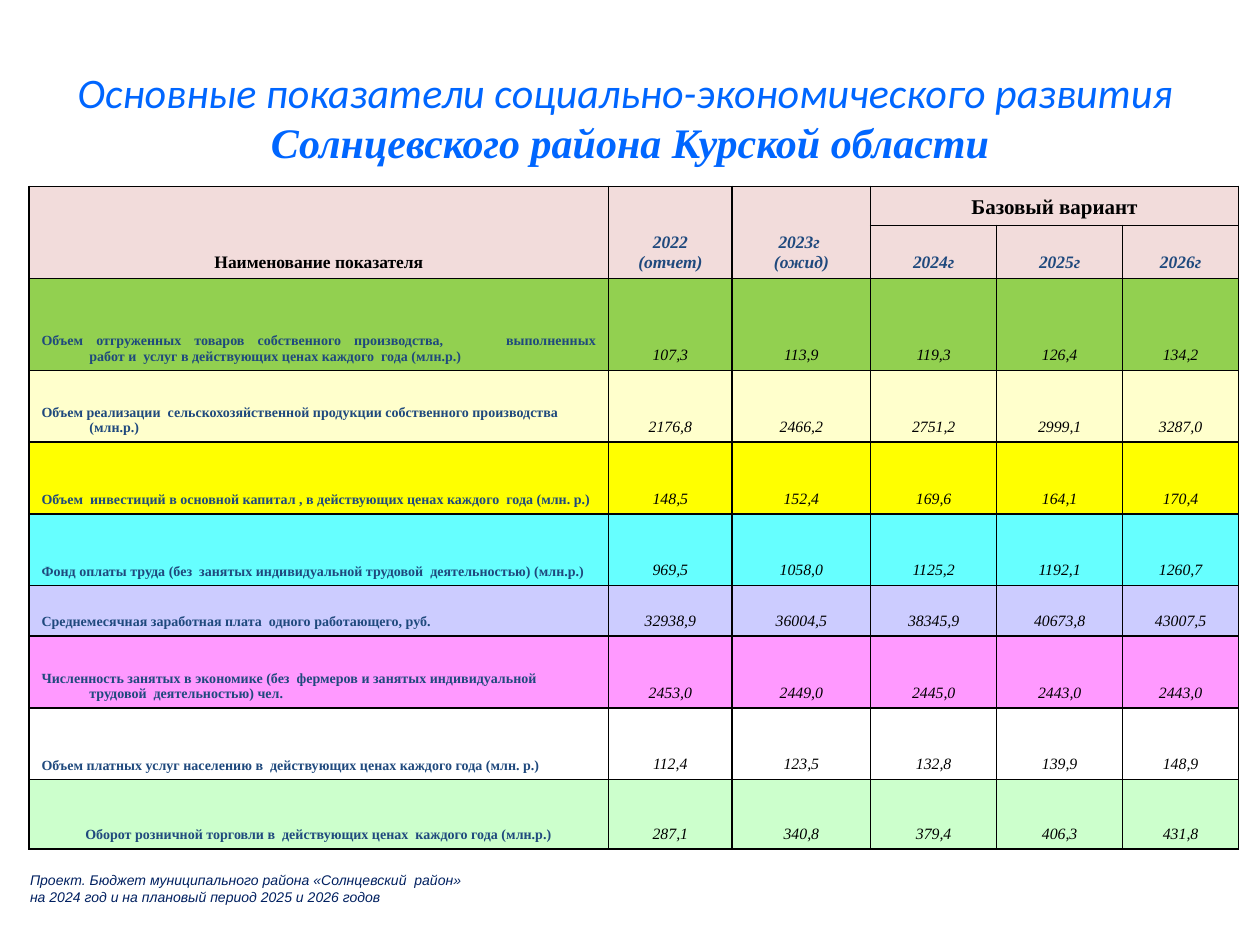
"""Build the slide with the district's main social and economic indicators."""
import pptx
import pptx.util
import pptx.oxml
import pptx.oxml.ns
import pptx.dml.color
import pptx.enum.text
from pptx.util import Inches, Pt

RGBColor = pptx.dml.color.RGBColor
Align = pptx.enum.text.PP_ALIGN
Anchor = pptx.enum.text.MSO_ANCHOR
BLUE = RGBColor(0x00, 0x66, 0xFF)
NAVY = RGBColor(0x1F, 0x49, 0x7D)
DARK = RGBColor(0x00, 0x20, 0x60)
BLACK = RGBColor(0x00, 0x00, 0x00)
ROSE = RGBColor(0xF2, 0xDC, 0xDB)
GREEN = RGBColor(0x92, 0xD0, 0x50)
CREAM = RGBColor(0xFF, 0xFF, 0xCC)
YELLOW = RGBColor(0xFF, 0xFF, 0x00)
CYAN = RGBColor(0x66, 0xFF, 0xFF)
LILAC = RGBColor(0xCC, 0xCC, 0xFF)
PINK = RGBColor(0xFF, 0x99, 0xFF)
MINT = RGBColor(0xCC, 0xFF, 0xCC)

COLS = [4.6, 0.98, 1.1, 1, 0.6, 0.4, 0.28, 0.64]
ROWS = [0.66, 0.59, 0.31, 0.42, 0.73, 0.57, 0.57, 0.57, 0.4, 0.57, 0.57, 0.55]
MERGES = [(0, 0, 0, 7), (1, 3, 1, 4), (1, 5, 1, 6), (2, 0, 3, 0), (2, 1, 3, 1),
          (2, 2, 3, 2), (2, 3, 2, 7)]
MERGES += [(row, col, row, col + 1) for row in range(3, 12) for col in (4, 6)]
PLACES = [1, 2, 3, 4, 6]
HEADS = [(2, 1, "2022\n(отчет)"), (2, 2, "2023г \n(ожид)"),
         (3, 3, "2024г"), (3, 4, "2025г"), (3, 6, "2026г")]
DATA = [
    ("Объем отгруженных товаров собственного производства,\tвыполненных работ и  услуг "
     "в действующих ценах каждого  года (млн.р.)",
     GREEN, Align.JUSTIFY, "107,3 113,9 119,3 126,4 134,2"),
    ("Объем реализации  сельскохозяйственной продукции собственного производства (млн.р.)",
     CREAM, Align.LEFT, "2176,8 2466,2 2751,2 2999,1 3287,0"),
    ("Объем  инвестиций в основной капитал , в действующих ценах каждого  года (млн. р.)",
     YELLOW, Align.LEFT, "148,5 152,4 169,6 164,1 170,4"),
    ("Фонд оплаты труда (без  занятых индивидуальной трудовой  деятельностью) (млн.р.)",
     CYAN, Align.LEFT, "969,5 1058,0 1125,2 1192,1 1260,7"),
    ("Среднемесячная заработная плата  одного работающего, руб.",
     LILAC, Align.LEFT, "32938,9 36004,5 38345,9 40673,8 43007,5"),
    ("Численность занятых в экономике (без  фермеров и занятых индивидуальной трудовой  "
     "деятельностью) чел.",
     PINK, Align.LEFT, "2453,0 2449,0 2445,0 2443,0 2443,0"),
    ("Объем платных услуг населению в  действующих ценах каждого года (млн. р.)",
     None, Align.JUSTIFY, "112,4 123,5 132,8 139,9 148,9"),
    ("Оборот розничной торговли в  действующих ценах  каждого года (млн.р.)",
     MINT, Align.CENTER, "287,1 340,8 379,4 406,3 431,8"),
]


class Deck:
    """Hold the style and the current slide."""

    serif = "Times New Roman"

    def __init__(self):
        """Open a deck with one titled slide."""
        self.prs = pptx.Presentation()
        self.prs.slide_width, self.prs.slide_height = Inches(10), Inches(7.5)
        self.slide = self.prs.slides.add_slide(self.prs.slide_layouts[5])

    def style(self, font, name, size, color, bold=False, italic=False):
        """Set all the traits of a font."""
        font.name, font.size, font.bold, font.italic = name, Pt(size), bold, italic
        font.color.rgb = color

    def title(self, first, second):
        """Fill the title with a plain line and a bold line."""
        box = self.slide.shapes.title
        box.left, box.top, box.width, box.height = map(Inches, (0.5, 0.3, 9, 1.25))
        box.text_frame.vertical_anchor = Anchor.MIDDLE
        par = box.text_frame.paragraphs[0]
        par.alignment = Align.CENTER
        run = par.add_run()
        run.text = first
        self.style(run.font, "Calibri", 24, BLUE, italic=True)
        par.add_line_break()
        run = par.add_run()
        run.text = second
        self.style(run.font, self.serif, 24, BLUE, True, True)

    def table(self, left, top, cols, rows, merges):
        """Add a bare table whose grid is drawn below the second row."""
        frame = self.slide.shapes.add_table(
            len(rows), len(cols), Inches(left), Inches(top),
            Inches(sum(cols)), Inches(sum(rows)))
        self.grid = frame.table
        self.grid.first_row = self.grid.horz_banding = False
        for col, width in zip(self.grid.columns, cols):
            col.width = Inches(width)
        for row, height in zip(self.grid.rows, rows):
            row.height = Inches(height)
        for row in range(len(rows)):
            for col in range(len(cols)):
                cell = self.grid.cell(row, col)
                self.edge(cell, "LRTB" if row > 1 else "B" * row)
                cell.fill.background()
                cell.text_frame.paragraphs[0].font.size = Pt(8)
        for top, left, low, right in merges:
            self.grid.cell(top, left).merge(self.grid.cell(low, right))

    def edge(self, cell, sides):
        """Draw the named sides of a cell and clear the others."""
        props = cell._tc.get_or_add_tcPr()
        for side in "LRTB":
            paint = ('<a:solidFill><a:srgbClr val="000000"/></a:solidFill>'
                     if side in sides else "<a:noFill/>")
            props.append(pptx.oxml.parse_xml(
                f'<a:ln{side} {pptx.oxml.ns.nsdecls("a")} w="12700">{paint}</a:ln{side}>'))

    def cell(self, row, col, text, fill, size, color, bold=False, italic=False,
             align=Align.CENTER, hang=0.38):
        """Write one cell with a hanging indent."""
        cell = self.grid.cell(row, col)
        cell.vertical_anchor = Anchor.BOTTOM
        if fill is not None:
            cell.fill.solid()
            cell.fill.fore_color.rgb = fill
        cell.text_frame.text = text
        for par in cell.text_frame.paragraphs:
            par.alignment = align
            self.style(par.font, self.serif, size, color, bold, italic)
            props = par._p.get_or_add_pPr()
            props.set("marL", str(Inches(hang)))
            props.set("indent", str(-Inches(hang)))
            if "\t" in text:
                props.insert(0, pptx.oxml.parse_xml(
                    f'<a:tabLst {pptx.oxml.ns.nsdecls("a")}>'
                    f'<a:tab pos="{Inches(3.65)}" algn="l"/></a:tabLst>'))

    def note(self, text, left, top, width, height):
        """Add a small slanted note."""
        box = self.slide.shapes.add_textbox(*map(Inches, (left, top, width, height)))
        box.text_frame.word_wrap = True
        box.text_frame.auto_size = pptx.enum.text.MSO_AUTO_SIZE.SHAPE_TO_FIT_TEXT
        box.text_frame.text = text
        for par in box.text_frame.paragraphs:
            self.style(par.font, "Arial", 8, DARK, italic=True)


def main():
    """Build and save the deck."""
    deck = Deck()
    deck.title("Основные показатели социально-экономического развития ",
               "Солнцевского района Курской области")
    deck.table(0.23, 0.23, COLS, ROWS, MERGES)
    deck.cell(2, 0, "Наименование показателя", ROSE, 10, BLACK, True)
    deck.cell(2, 3, "Базовый вариант", ROSE, 12, BLACK, True)
    for row, col, text in HEADS:
        deck.cell(row, col, text, ROSE, 10, NAVY, True, True)
    for row, (name, fill, align, values) in enumerate(DATA, 4):
        deck.cell(row, 0, name, fill, 8, NAVY, True, align=align)
        for col, value in zip(PLACES, values.split()):
            deck.cell(row, col, value, fill, 9, BLACK, italic=True,
                      hang=0.38 if col < 4 else 0)
    deck.note("Проект. Бюджет муниципального района «Солнцевский  район»\n"
              "на 2024 год и на плановый период 2025 и 2026 годов", 0.14, 6.87, 6.9, 0.37)
    deck.prs.save("out.pptx")


if __name__ == "__main__":
    main()
